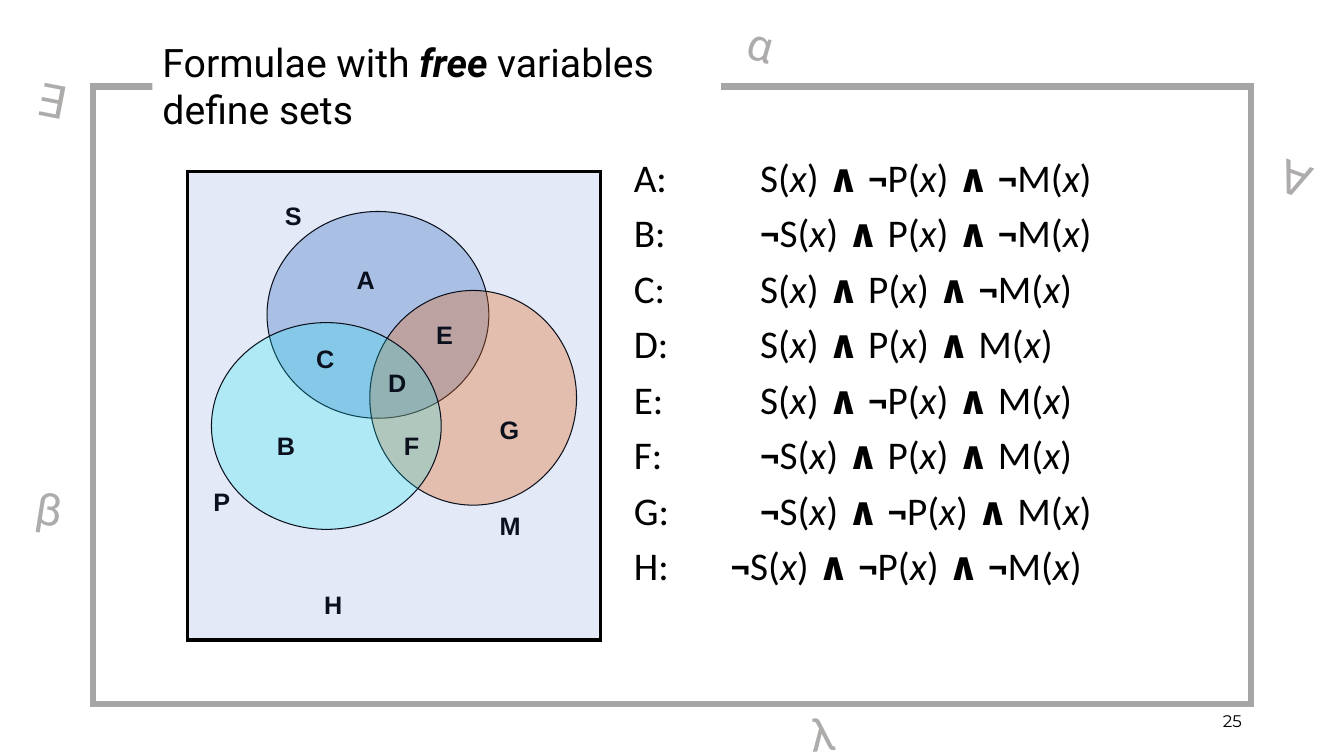
from lxml import etree
from pptx import Presentation
from pptx.dml.color import RGBColor
from pptx.enum import shapes, text
from pptx.oxml import ns
from pptx.util import Cm, Pt

TITLE = [("Formulae with ", {}), ("free ", {"bold": True, "italic": True}),
         ("variables define sets", {})]
FORMULAE = {"A": "S ¬P ¬M", "B": "¬S P ¬M", "C": "S P ¬M", "D": "S P M",
            "E": "S ¬P M", "F": "¬S P M", "G": "¬S ¬P M", "H": "¬S ¬P ¬M"}
FORMULA_TAB, LAST_FORMULA_TAB = Cm(3.18), Cm(2.44)
CIRCLES = [((6.73, 5.33, 5.59, 5.21), "4472C4", 35),
           ((9.32, 7.32, 5.21, 5.41), "FF6600", 33),
           ((5.33, 8.13, 5.79, 5.21), "00FFFF", 23)]
LABELS = [("S", 6.93, 4.93, 1.19), ("P", 5.13, 12.12, 1.19), ("M", 12.34, 12.73, 1.32),
          ("A", 8.74, 6.53, 0.99), ("B", 6.73, 10.72, 1.19), ("C", 7.72, 8.53, 0.99),
          ("D", 9.53, 9.12, 0.99), ("E", 10.74, 7.92, 1.19), ("F", 9.93, 10.72, 0.81),
          ("G", 12.34, 10.31, 0.99), ("H", 7.92, 14.73, 1.8)]
SYMBOLS = [("∀", 32, 3.73, 1.52, 20), ("∃", 0.69, 1.75, 1.6, 11),
           ("α", 18.62, 0.36, 1.6, 16), ("β", 0.66, 12.01, 1.47, 9),
           ("λ", 20.17, 17.65, 1.8, 354)]
UNIVERSE = (4.72, 4.32, 10.41, 11.81)
FRAME = (2.34, 2.18, 29.18, 15.57)
TITLE_BOX = (3.84, 0.86, 14.33, 2.59)
BODY_BOX = (15.72, 3.73, 13.89, 12.6)
NUMBER_BOX = (23.93, 17.65, 7.62, 1.02)

TITLE_FONT = {"name": "Roboto", "size": Pt(28)}
BODY_FONT = {"name": "Calibri", "size": Pt(28)}
LABEL_FONT = {"name": "Arial", "size": Pt(18), "bold": True}
SYMBOL_FONT = {"name": "Roboto", "size": Pt(32)}
NUMBER_FONT = {"name": "Montserrat", "size": Pt(12)}


def paint(fmt, color):
    fmt.rgb = RGBColor.from_string(color)


def add_run(p, content, font, color="000000"):
    r = p.add_run()
    r.text = content
    for key, value in font.items():
        setattr(r.font, key, value)
    paint(r.font.color, color)


def move(sp, box):
    for key, value in zip(("left", "top", "width", "height"), box):
        setattr(sp, key, Cm(value))


def prepare(sp, anchor):
    tf = sp.text_frame
    for key, value in {"word_wrap": True, "auto_size": text.MSO_AUTO_SIZE.NONE,
                       "vertical_anchor": anchor}.items():
        setattr(tf, key, value)
    return tf


def add_text(s, box, content, font, color="000000", anchor=text.MSO_ANCHOR.TOP):
    sp = s.shapes.add_textbox(*map(Cm, box))
    add_run(prepare(sp, anchor).paragraphs[0], content, font, color)
    return sp


def add_outline(s, kind, box, line, width, fill=None, alpha=100):
    sp = s.shapes.add_shape(kind, *map(Cm, box))
    sp.shadow.inherit = False
    paint(sp.line.color, line)
    sp.line.width = Pt(width)
    etree.SubElement(sp.element.spPr.find(ns.qn("a:ln")), ns.qn("a:miter"), lim="800000")
    if fill:
        sp.fill.solid()
        paint(sp.fill.fore_color, fill)
        color = sp.element.spPr.find(ns.qn("a:solidFill"))[0]
        etree.SubElement(color, ns.qn("a:alpha"), val=str(alpha * 1000))
    else:
        sp.fill.background()


def add_formula(p, name, terms, tab):
    for key, value in {"line_spacing": 1.0, "space_before": Pt(6), "space_after": Pt(0)}.items():
        setattr(p, key, value)
    pPr = p._p.get_or_add_pPr()
    for key, value in {"marL": 0, "indent": 0, "defTabSz": int(tab)}.items():
        pPr.set(key, str(value))
    etree.SubElement(pPr, ns.qn("a:buNone"))
    add_run(p, f"{name}:\t", BODY_FONT)
    for i, term in enumerate(terms):
        sign = ("∧ " if i else "") + term[:-1]
        if sign:
            add_run(p, sign, {**BODY_FONT, "bold": True})
        add_run(p, term[-1] + "(", BODY_FONT)
        add_run(p, "x", {**BODY_FONT, "italic": True})
        add_run(p, ")" if i == len(terms) - 1 else ") ", BODY_FONT)


def main():
    prs = Presentation()
    prs.slide_width, prs.slide_height = Cm(33.87), Cm(19.05)
    s = prs.slides.add_slide(prs.slide_layouts[1])
    title, body = s.shapes.title, s.placeholders[1]

    move(body, BODY_BOX)
    tf = prepare(body, text.MSO_ANCHOR.TOP)
    for i, (name, formula) in enumerate(FORMULAE.items()):
        p = tf.add_paragraph() if i else tf.paragraphs[0]
        add_formula(p, name, formula.split(), LAST_FORMULA_TAB if name == "H" else FORMULA_TAB)

    number = add_text(s, NUMBER_BOX, "25", NUMBER_FONT, anchor=text.MSO_ANCHOR.MIDDLE)
    number.text_frame.paragraphs[0].alignment = text.PP_ALIGN.RIGHT

    for box, color, alpha in CIRCLES:
        add_outline(s, shapes.MSO_SHAPE.OVAL, box, "000000", 0.75, color, alpha)
    for name, x, y, w in LABELS:
        add_text(s, (x, y, w, 1.02), name, LABEL_FONT)
    add_outline(s, shapes.MSO_SHAPE.RECTANGLE, UNIVERSE, "000000", 2.25, "4472C4", 15)
    add_outline(s, shapes.MSO_SHAPE.RECTANGLE, FRAME, "A6A6A6", 4.5)

    move(title, TITLE_BOX)
    title.fill.solid()
    paint(title.fill.fore_color, "FFFFFF")
    p = prepare(title, text.MSO_ANCHOR.MIDDLE).paragraphs[0]
    p.alignment = text.PP_ALIGN.LEFT
    for content, style in TITLE:
        add_run(p, content, {**TITLE_FONT, **style})
    title.element.getparent().append(title.element)

    for symbol, x, y, w, angle in SYMBOLS:
        add_text(s, (x, y, w, 1.63), symbol, SYMBOL_FONT, "AEABAB").rotation = angle

    prs.save("out.pptx")


if __name__ == "__main__":
    main()
